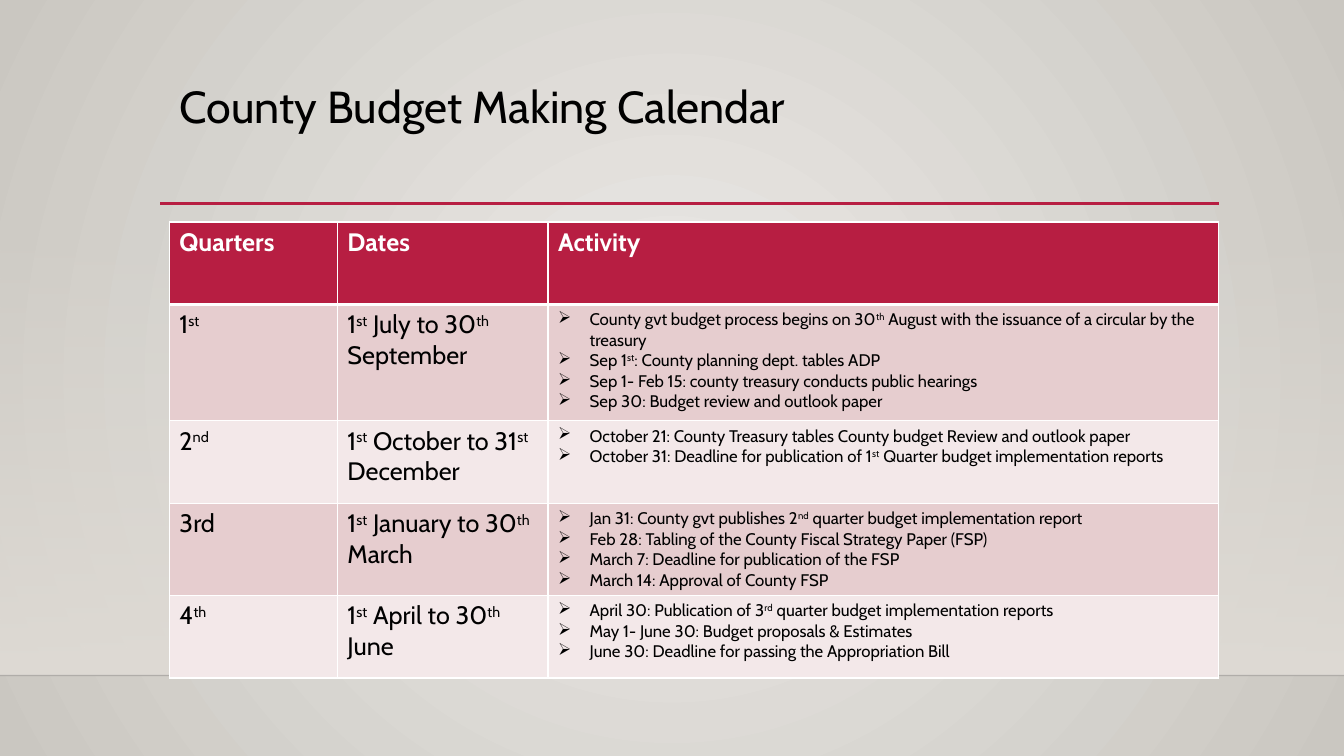
import pptx
import pptx.dml.color
import pptx.enum.shapes
import pptx.enum.text
import pptx.oxml
import pptx.oxml.ns
import pptx.util
from pptx.util import Pt

RGBColor = pptx.dml.color.RGBColor
qn = pptx.oxml.ns.qn

CRIMSON = RGBColor(0xB7, 0x1E, 0x42)
ROSE = RGBColor(0xE6, 0xCD, 0xCF)
PALE_ROSE = RGBColor(0xF3, 0xE8, 0xE9)
WHITE = RGBColor(0xFF, 0xFF, 0xFF)
BLACK = RGBColor(0, 0, 0)
HORIZON = RGBColor(0, 0, 1)
SAND = RGBColor(0xDF, 0xDB, 0xD5)
GLOW = RGBColor(0xEC, 0xEA, 0xE7)
STONE = RGBColor(0xCA, 0xC7, 0xC1)

FONT = "Cabin"
SLIDE_WIDTH, SLIDE_HEIGHT = 960, 540
COLUMN_WIDTHS = [120, 150.5, 479]
ROW_HEIGHTS = [59, 83, 59, 59, 59]
BULLET_INDENT = 22.5

# Text between carets is raised.
HEADINGS = ["Quarters", "Dates", "Activity"]
QUARTERS = [
    ("1^st^", "1^st^ July to 30^th^ September", [
        "County gvt budget process begins on 30^th^ August with the issuance of a circular by the treasury",
        "Sep 1^st^: County planning dept. tables ADP",
        "Sep 1- Feb 15: county treasury conducts public hearings",
        "Sep 30: Budget review and outlook paper"]),
    ("2^nd^", "1^st^ October to 31^st^ December", [
        "October 21: County Treasury tables County budget Review and outlook paper",
        "October 31: Deadline for publication of 1^st^ Quarter budget implementation reports"]),
    ("3rd", "1^st^ January to 30^th^ March", [
        "Jan 31: County gvt publishes 2^nd^ quarter budget implementation report",
        "Feb 28: Tabling of the County Fiscal Strategy Paper (FSP)",
        "March 7: Deadline for publication of the FSP",
        "March 14: Approval of County FSP"]),
    ("4^th^", "1^st^ April to 30^th^ June", [
        "April 30: Publication of 3^rd^ quarter budget implementation reports",
        "May 1- June 30: Budget proposals & Estimates",
        "June 30: Deadline for passing the Appropriation Bill"]),
]


def add_element(parent, tag, **attributes):
    element = parent.makeelement(qn(tag), attributes)
    parent.append(element)
    return element


def replace_with_gradient(properties, stops, direction):
    """Swap a solid fill for a gradient of (percent, colour, opacity) stops."""
    gradient = pptx.oxml.parse_xml(
        f'<a:gradFill {pptx.oxml.ns.nsdecls("a")} rotWithShape="1"><a:gsLst>'
        + "".join(f'<a:gs pos="{percent * 1000}"><a:srgbClr val="{colour}">'
                  f'<a:alpha val="{opacity * 1000}"/></a:srgbClr></a:gs>'
                  for percent, colour, opacity in stops)
        + f"</a:gsLst>{direction}</a:gradFill>")
    properties.replace(properties.find(qn("a:solidFill")), gradient)


def add_rule(slide, left, top, width, colour, weight):
    rule = slide.shapes.add_connector(
        pptx.enum.shapes.MSO_CONNECTOR.STRAIGHT,
        Pt(left), Pt(top), Pt(left + width), Pt(top))
    rule.line.color.rgb = colour
    rule.line.width = Pt(weight)
    add_element(rule.element.spPr, "a:effectLst")
    return rule


def draw_backdrop(slide, left, top, width, height):
    """Radial background, with a wall fading in above the horizon line."""
    slide.background.fill.solid()
    replace_with_gradient(
        slide.element.find(".//" + qn("p:bgPr")),
        [(0, GLOW, 100), (100, STONE, 100)],
        '<a:path path="circle"><a:fillToRect l="50000" t="50000" r="50000" b="50000"/></a:path>')
    wall = slide.shapes.add_shape(
        pptx.enum.shapes.MSO_SHAPE.RECTANGLE, Pt(left), Pt(top), Pt(width), Pt(height))
    wall.shadow.inherit = False
    wall.line.fill.background()
    wall.fill.solid()
    replace_with_gradient(wall.element.spPr, [(0, SAND, 0), (100, SAND, 100)],
                          '<a:lin ang="5400000" scaled="0"/>')
    horizon = add_rule(slide, left, top + height, width, HORIZON, 1)
    add_element(horizon.element.spPr.find(".//" + qn("a:srgbClr")), "a:alpha", val="20000")


def place_title(slide, left, top, width, height):
    title = slide.shapes.title
    title.left, title.top, title.width, title.height = map(Pt, (left, top, width, height))
    title.text_frame.text = "County Budget Making Calendar"
    title.text_frame.vertical_anchor = pptx.enum.text.MSO_ANCHOR.TOP
    heading = title.text_frame.paragraphs[0]
    heading.alignment = pptx.enum.text.PP_ALIGN.LEFT
    heading.line_spacing = 0.9
    heading.font.name = FONT
    heading.font.size = Pt(32)
    heading.font.color.rgb = BLACK
    add_rule(slide, left - 6.5, top + 88.5, width + 0.5, CRIMSON, 2.5)


def write_paragraph(paragraph, text, size, colour, bold=False, bulleted=False):
    for position, piece in enumerate(text.split("^")):
        if piece:
            run = paragraph.add_run()
            run.text = piece
            if position % 2:
                run.font._element.set("baseline", "30000")
    if bulleted:
        properties = paragraph._p.get_or_add_pPr()
        properties.set("marL", str(Pt(BULLET_INDENT)))
        properties.set("indent", str(-Pt(BULLET_INDENT)))
        add_element(properties, "a:buChar", char="➢")
    paragraph.font.name = FONT
    paragraph.font.size = Pt(size)
    paragraph.font.bold = bold
    paragraph.font.color.rgb = colour


def style_cell(cell, fill, bottom_weight=1, top_weight=1):
    properties = cell._tc.get_or_add_tcPr()
    for side, weight in (("L", 1), ("R", 1), ("T", top_weight), ("B", bottom_weight)):
        border = add_element(properties, f"a:ln{side}", w=str(Pt(weight)))
        add_element(add_element(border, "a:solidFill"), "a:srgbClr", val=str(WHITE))
    cell.fill.solid()
    cell.fill.fore_color.rgb = fill


def add_calendar(slide, left, top):
    calendar = slide.shapes.add_table(
        len(ROW_HEIGHTS), len(COLUMN_WIDTHS), Pt(left), Pt(top),
        Pt(sum(COLUMN_WIDTHS)), Pt(sum(ROW_HEIGHTS))).table
    for column, width in zip(calendar.columns, COLUMN_WIDTHS):
        column.width = Pt(width)
    for row, height in zip(calendar.rows, ROW_HEIGHTS):
        row.height = Pt(height)

    for column, heading in enumerate(HEADINGS):
        cell = calendar.cell(0, column)
        style_cell(cell, CRIMSON, bottom_weight=3)
        write_paragraph(cell.text_frame.paragraphs[0], heading, 18, WHITE, bold=True)

    for row, (quarter, dates, activities) in enumerate(QUARTERS, start=1):
        for column, lines in enumerate(([quarter], [dates], activities)):
            cell = calendar.cell(row, column)
            style_cell(cell, ROSE if row % 2 else PALE_ROSE, top_weight=3 if row == 1 else 1)
            is_activity = column == 2
            for number, line in enumerate(lines):
                frame = cell.text_frame
                paragraph = frame.add_paragraph() if number else frame.paragraphs[0]
                write_paragraph(paragraph, line, 12 if is_activity else 18, BLACK,
                                bulleted=is_activity)


def main():
    presentation = pptx.Presentation()
    presentation.slide_width = Pt(SLIDE_WIDTH)
    presentation.slide_height = Pt(SLIDE_HEIGHT)
    slide = presentation.slides.add_slide(presentation.slide_layouts[5])
    draw_backdrop(slide, 0, 159, SLIDE_WIDTH, 323.5)
    place_title(slide, 121, 57, 756, 83)
    add_calendar(slide, 121, 158.5)
    presentation.save("out.pptx")


if __name__ == "__main__":
    main()
